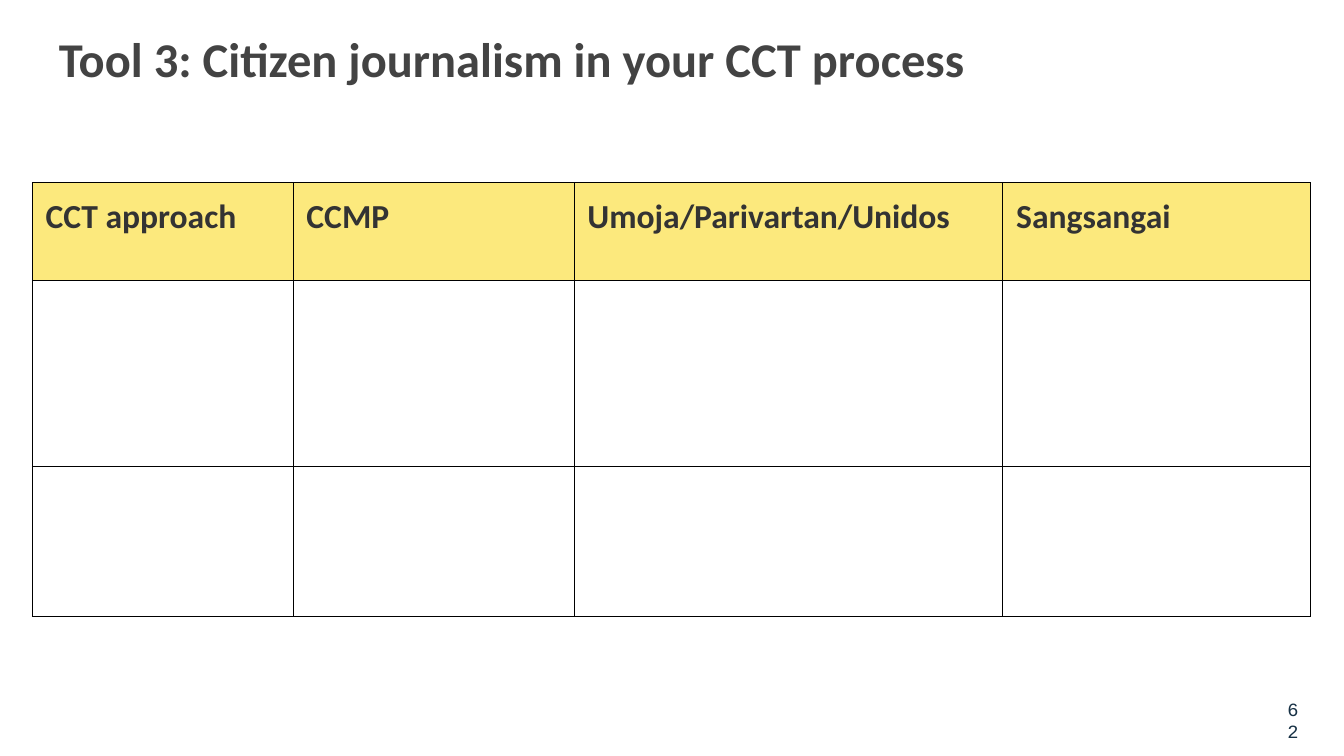
from dataclasses import dataclass

from lxml.etree import SubElement
from pptx import Presentation
from pptx.dml.color import RGBColor as Rgb
from pptx.enum.text import MSO_ANCHOR as Anchor, PP_ALIGN as Align
from pptx.oxml.ns import qn
from pptx.util import Pt


@dataclass(frozen=True)
class Theme:
    title_color: str = "434343"
    header_color: str = "333333"
    number_color: str = "173145"
    header_fill: str = "FCE97D"
    body_fill: str = "FFFFFF"
    border: str = "000000"
    font: str = "Calibri"
    number_font: str = "Courier New"
    title_size: float = 26
    header_size: float = 18
    number_size: float = 10
    border_width: float = 0.5
    inset: float = 7.2


class SlideBuilder:
    def __init__(self, slide, theme):
        self.slide = slide
        self.theme = theme

    def add_run(self, paragraph, text, font, size, color, bold=False):
        run = paragraph.add_run()
        run.text = text
        run.font.name = font
        run.font.size = Pt(size)
        run.font.bold = bold
        run.font.color.rgb = Rgb.from_string(color)

    def inset(self, holder):
        margin = Pt(self.theme.inset)
        holder.margin_left = holder.margin_right = margin
        holder.margin_top = holder.margin_bottom = margin
        holder.vertical_anchor = Anchor.TOP

    def text(self, area, text, font, size, color, bold=False, align=Align.LEFT):
        frame = self.slide.shapes.add_textbox(*map(Pt, area)).text_frame
        frame.word_wrap = True
        self.inset(frame)
        paragraph = frame.paragraphs[0]
        paragraph.alignment = align
        self.add_run(paragraph, text, font, size, color, bold)

    def outline(self, cell):
        properties = cell._tc.get_or_add_tcPr()
        for position, edge in enumerate(("a:lnL", "a:lnR", "a:lnT", "a:lnB")):
            line = SubElement(properties, qn(edge), w=str(Pt(self.theme.border_width)))
            properties.insert(position, line)
            fill = SubElement(line, qn("a:solidFill"))
            SubElement(fill, qn("a:srgbClr"), val=self.theme.border)

    def table(self, left, top, widths, heights, headers):
        theme = self.theme
        grid = self.slide.shapes.add_table(
            len(heights), len(widths), Pt(left), Pt(top),
            Pt(sum(widths)), Pt(sum(heights))).table
        for column, width in zip(grid.columns, widths):
            column.width = Pt(width)
        for row, height in zip(grid.rows, heights):
            row.height = Pt(height)
        for cell in grid.iter_cells():
            self.inset(cell)
            cell.fill.solid()
            cell.fill.fore_color.rgb = Rgb.from_string(theme.body_fill)
            self.outline(cell)
        for cell, header in zip(grid.rows[0].cells, headers):
            cell.fill.fore_color.rgb = Rgb.from_string(theme.header_fill)
            self.add_run(cell.text_frame.paragraphs[0], header, theme.font,
                         theme.header_size, theme.header_color, bold=True)


def main():
    deck = Presentation()
    deck.slide_width, deck.slide_height = Pt(720), Pt(405)
    theme = Theme()
    builder = SlideBuilder(deck.slides.add_slide(deck.slide_layouts[6]), theme)

    builder.text((677.5, 366.5, 25.2, 21.6), "62", theme.number_font,
                 theme.number_size, theme.number_color, align=Align.RIGHT)
    builder.text((24.5, 8.6, 691.2, 45.4),
                 "Tool 3: Citizen journalism in your CCT process",
                 theme.font, theme.title_size, theme.title_color, bold=True)
    builder.table(17.3, 97.9, (139.7, 150.5, 229.7, 164.9), (52.6, 99.4, 80.6),
                  ("CCT approach", "CCMP", "Umoja/Parivartan/Unidos", "Sangsangai"))

    deck.save("out.pptx")


if __name__ == "__main__":
    main()
